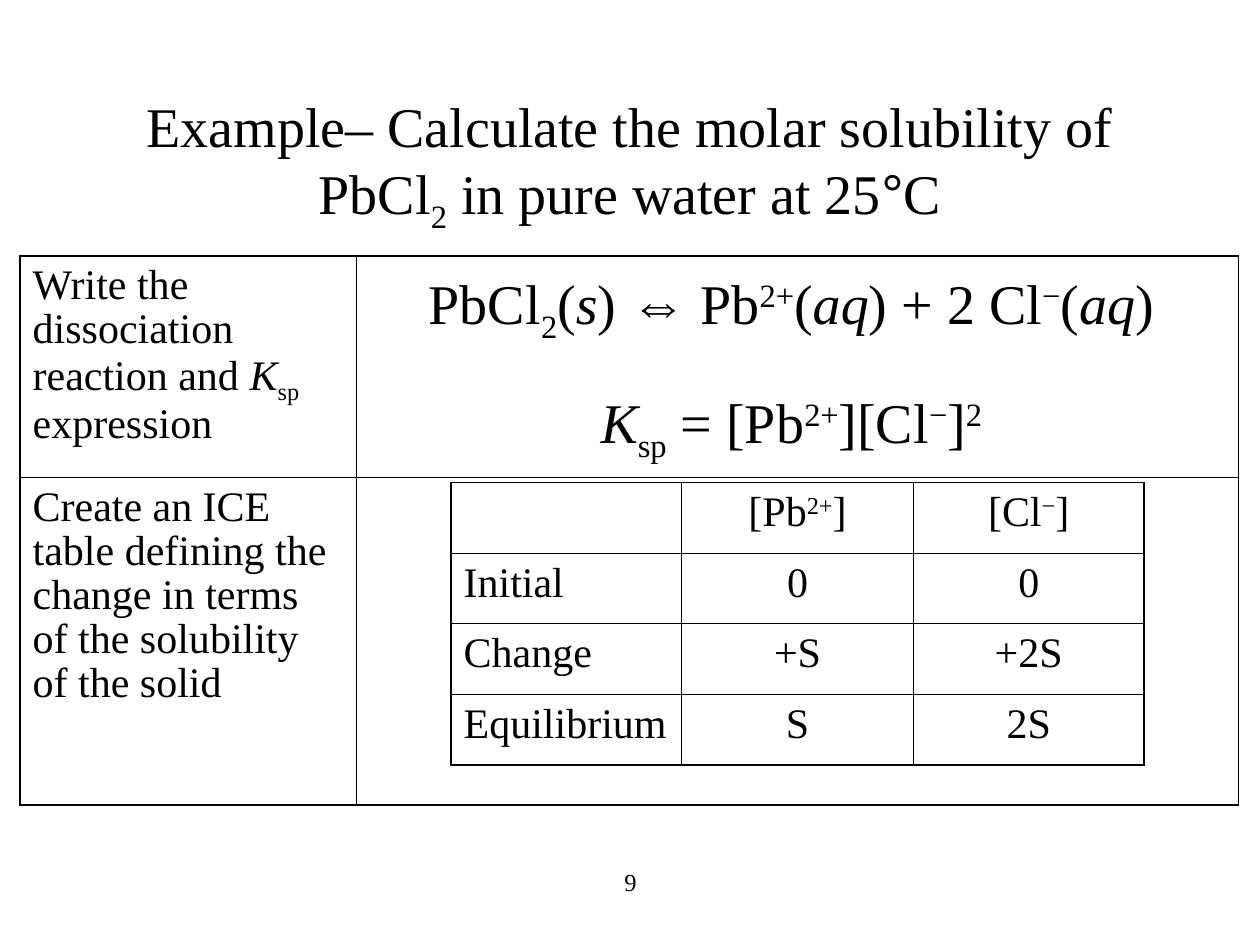
from pptx import Presentation
from pptx.dml.color import RGBColor
from pptx.enum import text as t
from pptx.oxml import parse_xml
from pptx.oxml import ns
from pptx.util import Inches, Pt

HUES = {"ink": "000000"}
FONT = "Times New Roman"
SHIFTS = {"_": "-25000", "^": "30000"}
THIN, THICK = 0.45, 1.08

TITLE = "Example– Calculate the molar solubility of PbCl|_2| in pure water at 25|~°|C"
REACTION = "PbCl|_2|(|/s|) |~⇔| Pb|^2+|(|/aq|) + 2 Cl|^−|(|/aq|)"
PRODUCT = "/K|_sp| = [Pb|^2+|][Cl|^−|]|^2"
STEPS = [
    ["Write the dissociation reaction and |/K|_sp| expression", ""],
    ["Create an ICE table defining the change in terms of the solubility of the solid", ""],
]
ICE = [
    ["", "[Pb|^2+|]", "[Cl|^−|]"],
    ["Initial", "0", "0"],
    ["Change", "+S", "+2S"],
    ["Equilibrium", "S", "2S"],
]


def write(para, marked, size, align=t.PP_ALIGN.CENTER):
    para.alignment = align
    for part in marked.split("|"):
        mark = part[0] if part[0] in "_^/~" else ""
        run = para.add_run()
        run.text = part[len(mark):]
        font = run.font
        font.size = Pt(size)
        font.name = "Arial" if mark == "~" else FONT
        font.italic = mark == "/"
        font.color.rgb = RGBColor.from_string(HUES["ink"])
        if mark in SHIFTS:
            run._r.get_or_add_rPr().set("baseline", SHIFTS[mark])


def add_title(slide, marked):
    title = slide.shapes.title
    title.left, title.top = Inches(0.75), Inches(0.67)
    title.width, title.height = Inches(8.5), Inches(1.25)
    frame = title.text_frame
    frame.auto_size = t.MSO_AUTO_SIZE.NONE
    frame.vertical_anchor = t.MSO_ANCHOR.MIDDLE
    write(frame.paragraphs[0], marked, 32)


def add_text(slide, box, lines, size, wrap=True):
    frame = slide.shapes.add_textbox(*map(Inches, box)).text_frame
    frame.word_wrap = wrap
    for i, line in enumerate(lines):
        para = frame.add_paragraph() if i else frame.paragraphs[0]
        write(para, line, size)
    return frame


def set_edge(cell, side, width):
    cell._tc.get_or_add_tcPr().append(parse_xml(
        f'<a:ln{side} {ns.nsdecls("a")} w="{Pt(width)}"><a:solidFill>'
        f'<a:srgbClr val="{HUES["ink"]}"/></a:solidFill></a:ln{side}>'))


def fill_cell(cell, marked, align):
    cell.fill.background()
    cell.margin_left = cell.margin_right = Inches(0.1)
    cell.margin_top, cell.margin_bottom = Inches(0.07), Inches(0.05)
    if marked:
        para = cell.text_frame.paragraphs[0]
        para.line_spacing = 0.95
        para.space_before = Pt(6)
        write(para, marked, 24, align)


def add_grid(slide, left, top, wides, highs, rows):
    box = map(Inches, (left, top, sum(wides), sum(highs)))
    table = slide.shapes.add_table(len(highs), len(wides), *box).table
    table.first_row = table.horz_banding = False
    for col, wide in zip(table.columns, wides):
        col.width = Inches(wide)
    for r, (high, row) in enumerate(zip(highs, rows)):
        table.rows[r].height = Inches(high)
        for c, marked in enumerate(row):
            cell = table.cell(r, c)
            outer = {"L": c == 0, "R": c == len(wides) - 1,
                     "T": r == 0, "B": r == len(highs) - 1}
            for side, edge in outer.items():
                set_edge(cell, side, THICK if edge else THIN)
            fill_cell(cell, marked, t.PP_ALIGN.CENTER if c else t.PP_ALIGN.LEFT)


def main():
    deck = Presentation()
    deck.slide_width, deck.slide_height = Inches(10), Inches(7.5)
    slide = deck.slides.add_slide(deck.slide_layouts[5])
    add_text(slide, (3.42, 6.83, 3.17, 0.5), ["9"], 14)
    add_title(slide, TITLE)
    add_grid(slide, 0.16, 2.03, [2.67, 7], [1.76, 2.6], STEPS)
    add_grid(slide, 3.58, 3.83, [1.83, 1.84, 1.83], [0.56] * 4, ICE)
    frame = add_text(slide, (3.29, 2.08, 5.98, 1.58), [REACTION, PRODUCT], 32, False)
    frame.auto_size = t.MSO_AUTO_SIZE.SHAPE_TO_FIT_TEXT
    frame.paragraphs[1].line_spacing = 0.75
    frame.paragraphs[1].space_before = Pt(30)
    deck.save("out.pptx")


if __name__ == "__main__":
    main()
